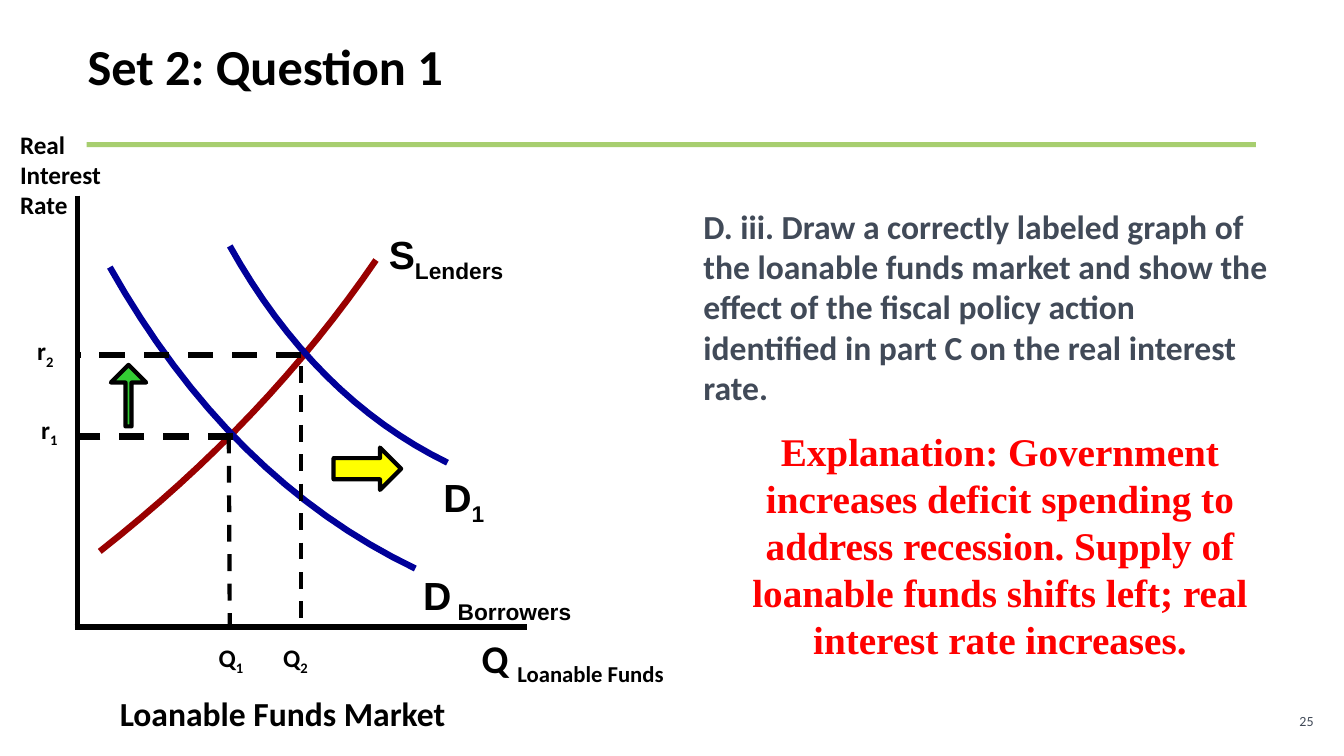
from lxml.etree import SubElement
from pptx import Presentation
from pptx.dml.color import RGBColor
from pptx.enum.dml import MSO_LINE
from pptx.enum.shapes import MSO_CONNECTOR, MSO_SHAPE
from pptx.enum.text import MSO_ANCHOR, MSO_AUTO_SIZE, PP_ALIGN
from pptx.oxml.ns import qn
from pptx.util import Inches, Pt

COLUMNS, ROWS = 133.33, 75
UNIT = Inches(0.1)
CURVE_STEPS = 16
COLORS = {
    "ink": "000000",
    "slate": "414A58",
    "rule": "A7CE6F",
    "supply": "990000",
    "demand": "000099",
    "shift": "FFFF00",
    "rise": "33CC33",
    "answer": "FF0000",
}


def color(name):
    return RGBColor.from_string(COLORS[name])


def grid(*cells):
    return [round(cell * UNIT) for cell in cells]


def add_text(page, area, pieces, size, font="Calibri", ink="ink", bold=True,
             align=PP_ALIGN.LEFT, anchor=MSO_ANCHOR.TOP, tab=None):
    box = page.shapes.add_textbox(*grid(*area))
    frame = box.text_frame
    frame.word_wrap = True
    frame.auto_size = MSO_AUTO_SIZE.NONE
    frame.vertical_anchor = anchor
    para = frame.paragraphs[0]
    para.alignment = align
    if tab:
        stops = SubElement(para._p.get_or_add_pPr(), qn("a:tabLst"))
        SubElement(stops, qn("a:tab"), pos=str(grid(tab)[0]), algn="l")
    for index, piece in enumerate(pieces):
        span = para.add_run()
        span.text = piece
        span.font.name = font
        span.font.size = Pt(size)
        span.font.bold = bold
        span.font.color.rgb = color(ink)
        if index % 2:
            span._r.get_or_add_rPr().set("baseline", "-25000")


def add_line(shapes, start, end, width, dashed=False):
    line = shapes.add_connector(MSO_CONNECTOR.STRAIGHT, *grid(*start, *end))
    line.line.color.rgb = color("ink")
    line.line.width = Pt(width)
    if dashed:
        line.line.dash_style = MSO_LINE.DASH
    SubElement(line._element.spPr, qn("a:effectLst"))


def add_curve(page, start, bend, end, ink):
    points = []
    for step in range(CURVE_STEPS + 1):
        t = step / CURVE_STEPS
        points.append(grid(*(
            (1 - t) ** 2 * a + 2 * t * (1 - t) * b + t ** 2 * c
            for a, b, c in zip(start, bend, end)
        )))
    builder = page.shapes.build_freeform(*points[0])
    builder.add_line_segments(points[1:], close=False)
    curve = builder.convert_to_shape()
    curve.shadow.inherit = False
    curve.fill.background()
    curve.line.color.rgb = color(ink)
    curve.line.width = Pt(4.5)


def add_block(page, preset, area, fill, outline=0, turn=0, shaft=None):
    block = page.shapes.add_shape(preset, *grid(*area))
    block.shadow.inherit = False
    block.rotation = turn
    block.fill.solid()
    block.fill.fore_color.rgb = color(fill)
    if outline:
        block.line.color.rgb = color("ink")
        block.line.width = Pt(outline)
    else:
        block.line.fill.background()
    if shaft:
        block.adjustments[0] = shaft


def add_graph(page):
    add_curve(page, (9.9, 54.7), (26.4, 41.75), (37.3, 25.8), "supply")
    add_curve(page, (10.9, 26.5), (22.75, 47.55), (41.2, 56.4), "demand")
    axes = page.shapes.add_group_shape()
    add_line(axes.shapes, (7.7, 19.4), (7.7, 62.5), 4)
    add_line(axes.shapes, (7.4, 62.2), (52.3, 62.2), 4)
    add_block(page, MSO_SHAPE.RIGHT_ARROW, (33.1, 44.4, 6.7, 4.2), "shift", 3)
    add_curve(page, (22.8, 24.4), (31.2, 39.45), (44.4, 45.9), "demand")
    add_line(page.shapes, (29.9, 35.2), (7.7, 35.2), 4.5, True)
    add_block(page, MSO_SHAPE.RIGHT_ARROW, (9.7, 37.5, 6.1, 3.5), "rise", 3,
              turn=270, shaft=0.17)
    add_line(page.shapes, (23.1, 43.3), (7.4, 43.3), 4.5, True)
    add_line(page.shapes, (29.9, 36.3), (29.9, 61.3), 3, True)
    add_line(page.shapes, (22.7, 43.3), (22.8, 63.1), 3, True)


def add_graph_labels(page):
    for area, pieces in (
        ((41, 56.2, 34.6, 5.1), ("D", " Borrowers")),
        ((43, 46.5, 7.4, 5.7), ("D", "1")),
        ((37.6, 22.4, 18, 5.5), ("S", "Lenders")),
    ):
        add_text(page, area, pieces, 28, "Arial")
    add_text(page, (1, 12.3, 12.9, 10.1), ["Real Interest Rate"], 18)
    add_text(page, (46.8, 62.4, 32.2, 5.7), ("Q ", "Loanable Funds"), 28)
    add_text(page, (2.7, 32.8, 6, 4), ("r", "2"), 18)
    add_text(page, (3.1, 40.6, 4.9, 4), ("r", "1"), 18)
    add_text(page, (20.7, 63.2, 14.4, 4), ("Q", "1", "\tQ", "2"), 18, tab=6.4)
    add_text(page, (10.9, 68.3, 43.6, 5), ["Loanable Funds Market"], 24)


def main():
    deck = Presentation()
    deck.slide_width, deck.slide_height = grid(COLUMNS, ROWS)
    page = deck.slides.add_slide(deck.slide_layouts[6])
    add_block(page, MSO_SHAPE.RECTANGLE, (8.6, 14.1, 116, 0.5), "rule")
    add_text(page, (94.2, 69.5, 37.1, 4), ["25"], 10, ink="slate", bold=False,
             align=PP_ALIGN.RIGHT, anchor=MSO_ANCHOR.MIDDLE)
    add_graph(page)
    add_graph_labels(page)
    add_text(page, (68.8, 19.9, 58.1, 21.2), [
        "D. iii. Draw a correctly labeled graph of the loanable funds market "
        "and show the effect of the fiscal policy action identified in part C "
        "on the real interest rate."], 24, ink="slate")
    add_text(page, (71.5, 41.9, 55.4, 27.6), [
        "Explanation: Government increases deficit spending to address "
        "recession. Supply of loanable funds shifts left; real interest rate "
        "increases."], 28, "Times New Roman", "answer", align=PP_ALIGN.CENTER)
    add_text(page, (7.7, 3, 79.5, 7.1), ["Set 2: Question 1"], 36)
    deck.save("out.pptx")


if __name__ == "__main__":
    main()
